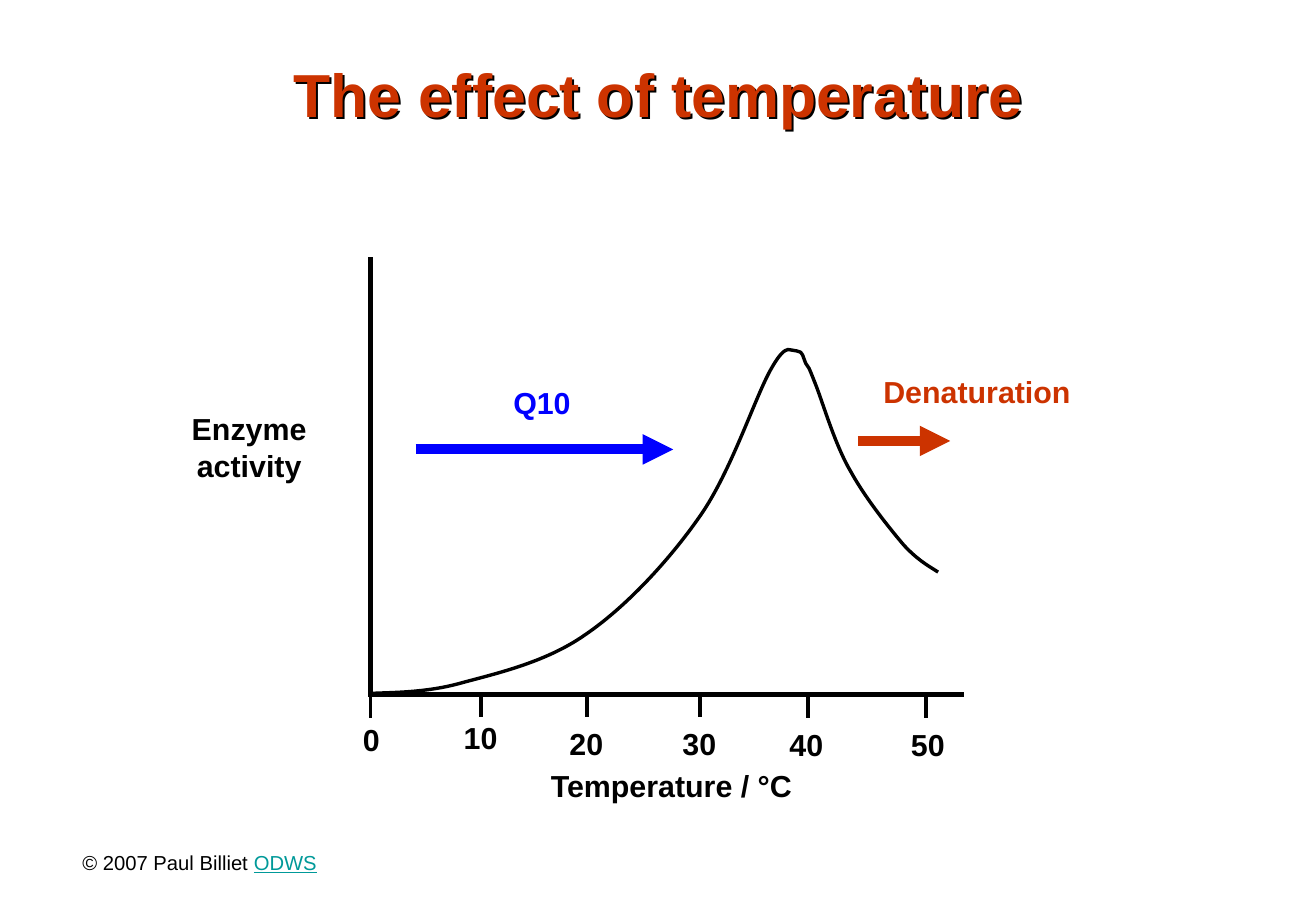
import pptx
import pptx.util
import pptx.dml.color
import pptx.enum.shapes
import pptx.enum.text
from lxml import etree
from pptx.oxml.ns import qn

Inches = pptx.util.Inches
Pt = pptx.util.Pt
CENTER = pptx.enum.text.PP_ALIGN.CENTER
LEFT = pptx.enum.text.PP_ALIGN.LEFT

THEME = {
    "font": "Arial",
    "black": "000000", "red": "CC3300", "blue": "0000FF", "teal": "009999",
    "title": 36, "label": 18, "footer": 12,
    "axis": 3, "thin": 2, "arrow": 6, "shadow": 1.7,
}

TITLE = ("The effect of temperature", (0.54, 0.3, 9.75, 0.93))
FOOTER = ("© 2007 Paul Billiet ", "ODWS", (0.58, 6.95, 2.57, 0.3))

# text, box (left, top, width, height), colour
LABELS = [
    ("Temperature / °C", (2.85, 6.27, 5.35, 0.41), "black"),
    ("Enzyme activity", (1.29, 3.33, 1.52, 0.79), "black"),
    ("Q10", (3.65, 3.11, 1.62, 0.4), "blue"),
    ("Denaturation", (7.05, 3.02, 1.98, 0.4), "red"),
]
# start, end, colour
AXES = [((3.05, 2.12), (3.05, 5.74), "black"), ((7.93, 5.72), (3.06, 5.72), "black")]
ARROWS = [((3.42, 3.7), (5.54, 3.7), "blue"), ((7.06, 3.63), (7.82, 3.63), "red")]

# degrees, tick x, tick top, label left, label top
TICKS = [
    ("0", 3.05, 5.73, 2.76, 5.89),
    ("10", 3.96, 5.72, 3.66, 5.87),
    ("20", 4.83, 5.72, 4.53, 5.92),
    ("30", 5.76, 5.72, 5.46, 5.92),
    ("40", 6.65, 5.73, 6.34, 5.93),
    ("50", 7.62, 5.73, 7.34, 5.93),
]
TICK_LENGTH = 0.18
TICK_LABEL_SIZE = (0.59, 0.46)

# Bézier curve: start, then two control points and an end for each segment
CURVE_START = (3.04, 5.71)
CURVE_SEGMENTS = [
    ((3.16, 5.7), (3.47, 5.71), (3.77, 5.63)),
    ((4.06, 5.55), (4.48, 5.46), (4.81, 5.23)),
    ((5.15, 5), (5.51, 4.61), (5.76, 4.25)),
    ((6.02, 3.88), (6.22, 3.25), (6.35, 3.03)),
    ((6.48, 2.8), (6.51, 2.9), (6.56, 2.89)),
    ((6.61, 2.89), (6.61, 2.95), (6.63, 2.99)),
    ((6.66, 3.03), (6.65, 3.01), (6.71, 3.16)),
    ((6.77, 3.31), (6.87, 3.66), (7, 3.88)),
    ((7.12, 4.1), (7.32, 4.35), (7.44, 4.49)),
    ((7.56, 4.62), (7.66, 4.67), (7.72, 4.71)),
]


def color(name):
    return pptx.dml.color.RGBColor.from_string(THEME[name])


def add_text(slide, text, box, size="label", fill="black", bold=True, align=CENTER):
    """Add a one-paragraph text box and return its shape."""
    shape = slide.shapes.add_textbox(*map(Inches, box))
    shape.text_frame.word_wrap = True
    paragraph = shape.text_frame.paragraphs[0]
    paragraph.alignment = align
    paragraph.add_run().text = text
    font = paragraph.font
    font.name, font.size, font.bold = THEME["font"], Pt(THEME[size]), bold
    font.color.rgb = color(fill)
    return shape


def add_line(slide, start, end, fill, width, arrow=False):
    connector = slide.shapes.add_connector(
        pptx.enum.shapes.MSO_CONNECTOR.STRAIGHT, *map(Inches, start + end))
    connector.line.color.rgb = color(fill)
    connector.line.width = Pt(THEME[width])
    if arrow:
        line = connector._element.spPr.find(qn("a:ln"))
        etree.SubElement(line, qn("a:tailEnd"), type="triangle")
    etree.SubElement(connector._element.spPr, qn("a:effectLst"))


def add_curve(slide):
    """Lay out the control polygon, then turn each three of its sides into a Bézier."""
    builder = slide.shapes.build_freeform(*map(Inches, CURVE_START))
    builder.add_line_segments(
        [tuple(map(Inches, point)) for segment in CURVE_SEGMENTS for point in segment],
        close=False)
    curve = builder.convert_to_shape()
    outline = curve._element.find(".//" + qn("a:path"))
    sides = outline.findall(qn("a:lnTo"))
    for first in range(0, len(sides), 3):
        bezier = etree.SubElement(outline, qn("a:cubicBezTo"))
        for side in sides[first:first + 3]:
            bezier.append(side[0])
            outline.remove(side)
    curve.shadow.inherit = False
    curve.fill.background()
    curve.line.color.rgb = color("black")
    curve.line.width = Pt(THEME["thin"])


def add_title(slide):
    text, box = TITLE
    title = add_text(slide, text, box, "title", "red")
    title.text_frame.vertical_anchor = pptx.enum.text.MSO_ANCHOR.MIDDLE
    effects = etree.SubElement(title._element.spPr, qn("a:effectLst"))
    shadow = etree.SubElement(effects, qn("a:outerShdw"), blurRad="0",
                              dist=str(Pt(THEME["shadow"])), dir="2700000")
    etree.SubElement(shadow, qn("a:srgbClr"), val=THEME["black"])


def add_footer(slide):
    text, site, box = FOOTER
    footer = add_text(slide, text, box, "footer", bold=False, align=LEFT)
    run = footer.text_frame.paragraphs[0].add_run()
    run.text = site
    run.font.underline = True
    run.font.color.rgb = color("teal")


def main():
    presentation = pptx.Presentation()
    presentation.slide_width, presentation.slide_height = Inches(10.83), Inches(7.5)
    slide = presentation.slides.add_slide(presentation.slide_layouts[6])

    add_title(slide)
    for start, end, fill in AXES:
        add_line(slide, start, end, fill, "axis")
    for degrees, x, top, left, label_top in TICKS:
        add_line(slide, (x, top), (x, top + TICK_LENGTH), "black", "thin")
        add_text(slide, degrees, (left, label_top) + TICK_LABEL_SIZE)
    add_curve(slide)
    for start, end, fill in ARROWS:
        add_line(slide, start, end, fill, "arrow", arrow=True)
    for text, box, fill in LABELS:
        add_text(slide, text, box, fill=fill)
    add_footer(slide)

    presentation.save("out.pptx")


if __name__ == "__main__":
    main()
